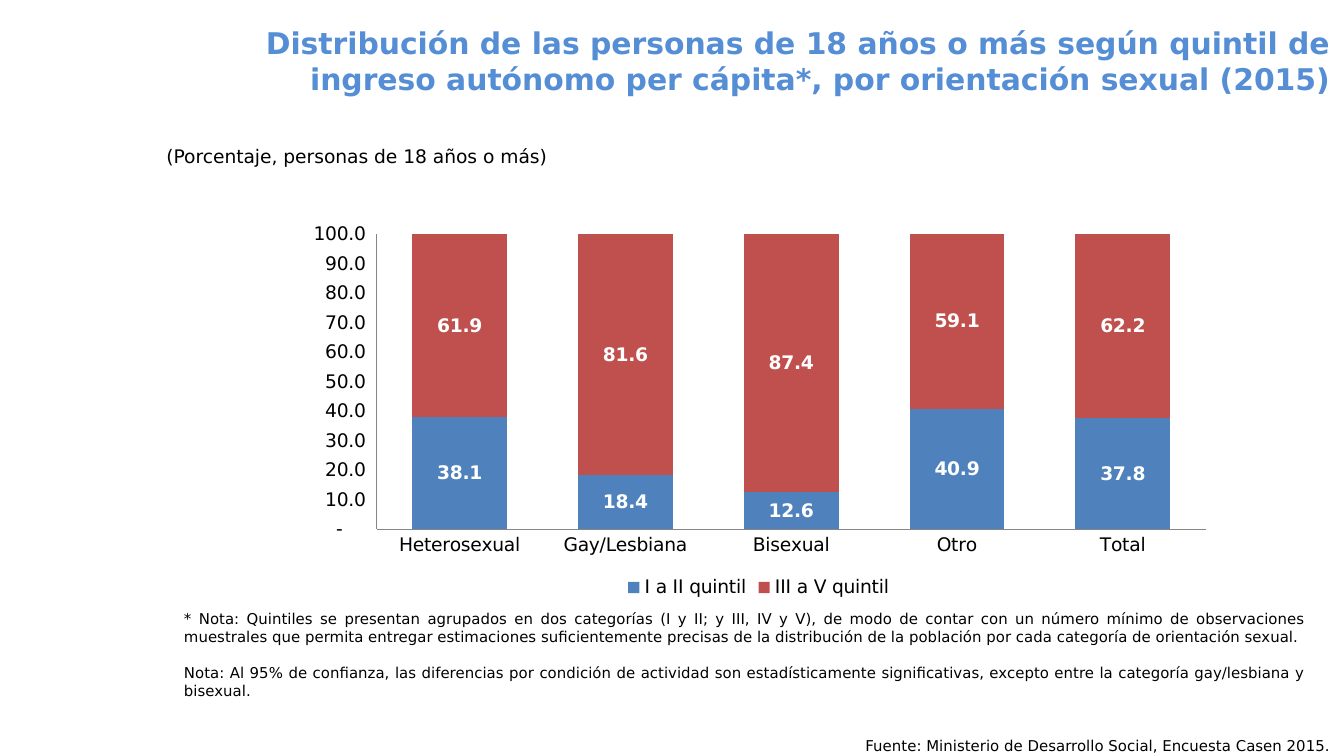
from lxml import etree
from pptx import Presentation
from pptx import util as u
from pptx.chart.data import CategoryChartData
from pptx.dml.color import RGBColor
from pptx.enum import chart as ch, shapes, text
from pptx.oxml.ns import qn

WIDTH = 10
HEIGHT = WIDTH * 9 / 16
FONT = "DejaVu Sans"
COLORS = {"title": "558ED5", "text": "000000", "white": "FFFFFF",
          "axis": "868686", "low": "4F81BD", "high": "C0504D"}

TITLE = ("Distribución de las personas de 18 años o más según quintil de "
         "ingreso autónomo per cápita*, por orientación sexual (2015)")
SUBTITLE = "(Porcentaje, personas de 18 años o más)"
SOURCE = "Fuente: Ministerio de Desarrollo Social, Encuesta Casen 2015."
NOTES = [
    "* Nota: Quintiles se presentan agrupados en dos categorías (I y II; y III, IV y V), "
    "de modo de contar con un número mínimo de observaciones muestrales que permita "
    "entregar estimaciones suficientemente precisas de la distribución de la población "
    "por cada categoría de orientación sexual.",
    "Nota: Al 95% de confianza, las diferencias por condición de actividad son "
    "estadísticamente significativas, excepto entre la categoría gay/lesbiana y bisexual.",
]
CATEGORIES = ["Heterosexual", "Gay/Lesbiana", "Bisexual", "Otro", "Total"]
SERIES = [
    ("I a II quintil", "low", [38.1, 18.4, 12.6, 40.9, 37.8]),
    ("III a V quintil", "high", [61.9, 81.6, 87.4, 59.1, 62.2]),
]
NUMBER_FORMAT = '_-* #,##0.0_-;\\-* #,##0.0_-;_-* "-"??_-;'
PLOT_SHARES = {"x": 0.09, "y": 0.05, "w": 0.89, "h": 0.76}

# Left, top, width, height in inches
BOXES = {
    "title": (1.1, 0.13, WIDTH - 1.1, 0.64),
    "subtitle": (1.14, 1.03, 3.18, 0.27),
    "chart": (2.18, 1.6, 6.93, 2.89),
    "notes": (1.27, 4.49, 8.55, 0.77),
    "source": (4.8, 5.43, WIDTH - 4.8, 0.17),
}


def box(name):
    return [u.Inches(length) for length in BOXES[name]]


def rgb(name):
    return RGBColor.from_string(COLORS[name])


def style(font, size, color="text", bold=False):
    font.name, font.size, font.bold = FONT, u.Pt(size), bold
    font.color.rgb = rgb(color)


def write(shape, paragraphs, size, align, color="text", bold=False, wrap=True, gap=0):
    frame = shape.text_frame
    frame.text = "\n".join(paragraphs)
    frame.word_wrap = wrap
    frame.auto_size = text.MSO_AUTO_SIZE.NONE
    for index, paragraph in enumerate(frame.paragraphs):
        paragraph.alignment = align
        if index:
            paragraph.space_before = u.Pt(gap)
        for run in paragraph.runs:
            style(run.font, size, color, bold)


def set_plot_layout(chart):
    """Fix the inner plot area as shares of the chart."""
    plot_area = chart._chartSpace.chart.plotArea
    for old in plot_area.findall(qn("c:layout")):
        plot_area.remove(old)
    layout = etree.Element(qn("c:layout"))
    manual = etree.SubElement(layout, qn("c:manualLayout"))
    settings = {"layoutTarget": "inner", "xMode": "edge", "yMode": "edge", **PLOT_SHARES}
    for tag, value in settings.items():
        etree.SubElement(manual, qn(f"c:{tag}")).set("val", str(value))
    plot_area.insert(0, layout)


def add_quintile_chart(slide):
    data = CategoryChartData(number_format="0.0")
    data.categories = CATEGORIES
    for name, _, values in SERIES:
        data.add_series(name, values)
    chart = slide.shapes.add_chart(
        ch.XL_CHART_TYPE.COLUMN_STACKED, *box("chart"), data).chart
    style(chart.font, 10)
    chart.has_title = False
    chart.has_legend = True
    chart.legend.position = ch.XL_LEGEND_POSITION.BOTTOM
    chart.legend.include_in_layout = False
    style(chart.legend.font, 10)

    plot = chart.plots[0]
    plot.gap_width, plot.overlap = 75, 100
    plot.vary_by_categories = False
    for series, (_, color, _) in zip(plot.series, SERIES):
        series.format.fill.solid()
        series.format.fill.fore_color.rgb = rgb(color)
        labels = series.data_labels
        labels.show_value = True
        labels.number_format = NUMBER_FORMAT
        labels.number_format_is_linked = False
        style(labels.font, 10, "white", bold=True)

    for axis in (chart.category_axis, chart.value_axis):
        axis.has_major_gridlines = False
        axis.major_tick_mark = axis.minor_tick_mark = ch.XL_TICK_MARK.NONE
        axis.format.line.color.rgb = rgb("axis")
        axis.format.line.width = u.Pt(0.75)
        style(axis.tick_labels.font, 10)
    value_axis = chart.value_axis
    value_axis.minimum_scale, value_axis.maximum_scale = 0, 100
    value_axis.major_unit = 10
    value_axis.tick_labels.number_format = NUMBER_FORMAT
    value_axis.tick_labels.number_format_is_linked = False
    set_plot_layout(chart)


def main():
    presentation = Presentation()
    presentation.slide_width = u.Inches(WIDTH)
    presentation.slide_height = u.Inches(HEIGHT)
    slide = presentation.slides.add_slide(presentation.slide_layouts[5])
    align = text.PP_ALIGN

    title = slide.shapes.title
    title.left, title.top, title.width, title.height = box("title")
    write(title, [TITLE], 16, align.RIGHT, "title", bold=True)
    title.text_frame.vertical_anchor = text.MSO_ANCHOR.MIDDLE

    source = slide.shapes.add_shape(shapes.MSO_SHAPE.RECTANGLE, *box("source"))
    source.shadow.inherit = False
    source.fill.solid()
    source.fill.fore_color.rgb = rgb("white")
    source.line.fill.background()
    write(source, [SOURCE], 8, align.RIGHT, wrap=False)
    source.text_frame.vertical_anchor = text.MSO_ANCHOR.TOP

    add_quintile_chart(slide)
    write(slide.shapes.add_textbox(*box("notes")), NOTES, 8, align.JUSTIFY, gap=9.5)
    write(slide.shapes.add_textbox(*box("subtitle")), [SUBTITLE], 10, align.LEFT, wrap=False)
    presentation.save("out.pptx")


if __name__ == "__main__":
    main()
